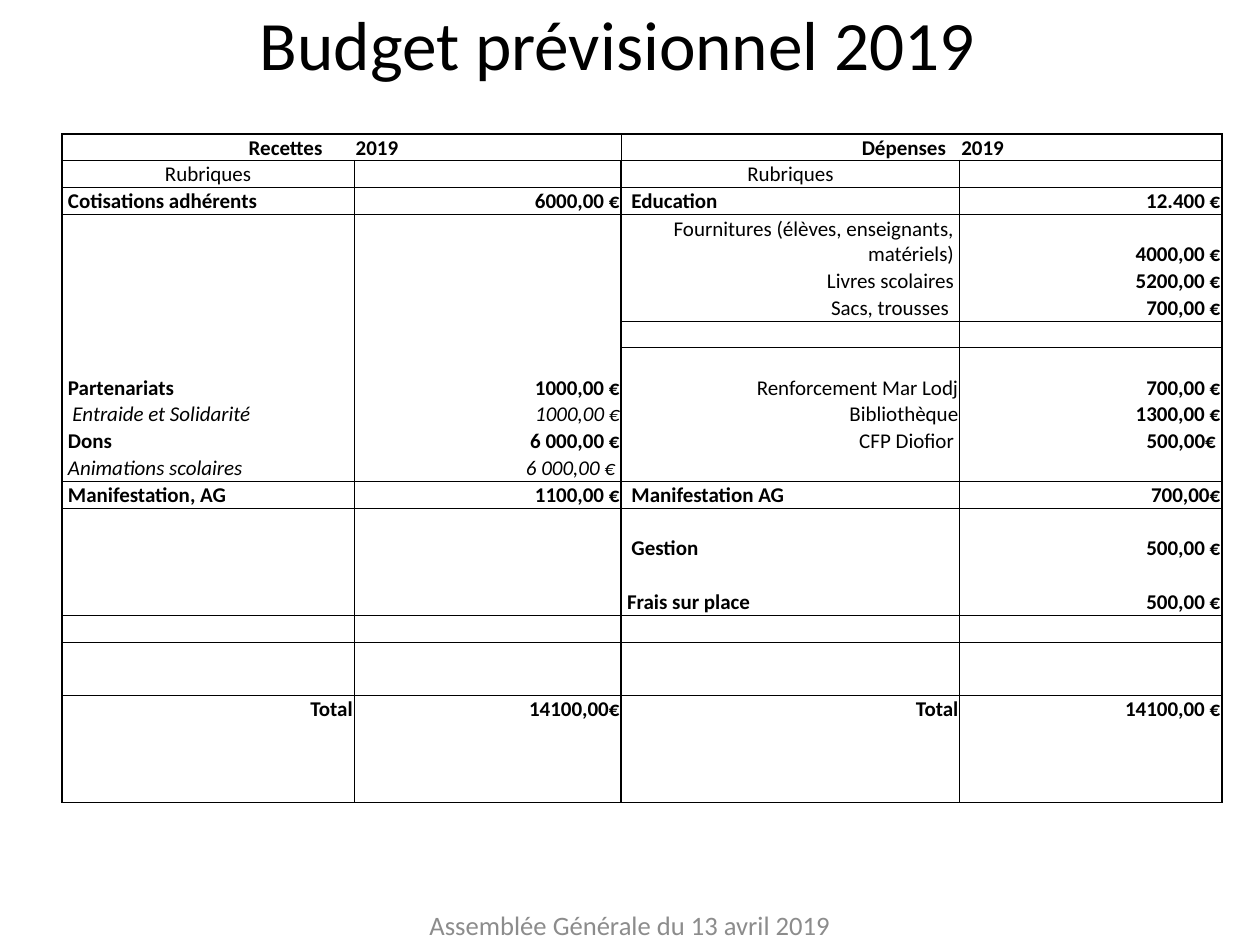
from lxml.etree import SubElement
from pptx import Presentation
from pptx.dml.color import RGBColor
from pptx.enum.text import MSO_ANCHOR, PP_ALIGN
from pptx.oxml.ns import qn
from pptx.util import Cm, Pt

FONT = "Calibri"
BLACK, GREY = "000000", "8C8C8C"
NO_STYLE = "{2D5ABB26-0587-4C30-8999-92F81FD0307C}"
ALIGN = {"l": PP_ALIGN.LEFT, "c": PP_ALIGN.CENTER, "r": PP_ALIGN.RIGHT}

COL_WIDTHS = [5.89, 5.38, 6.83, 5.28]
ROW_COUNT, ROW_HEIGHT = 23, 0.54
TALL_ROWS = {3: 1.07, 7: 1.07}

# Row -> four cells: (text, flags l/c/r + b(old) + i(talic), side padding in cm)
CELLS = {
    0: [("Recettes", "rb", 0.64), ("2019", "lb"), ("Dépenses", "rb", 0.28), ("2019", "lb")],
    1: [("Rubriques", "c"), None, ("Rubriques", "c"), None],
    2: [("Cotisations adhérents", "lb", 0.12), ("6000,00 €", "rb"),
        ("Education", "lb", 0.21), ("12.400 €", "rb")],
    3: [None, None, ("Fournitures (élèves, enseignants, matériels)", "r", 0.12),
        ("4000,00 €", "rb")],
    4: [None, None, ("Livres scolaires", "r", 0.12), ("5200,00 €", "rb")],
    5: [None, None, ("Sacs, trousses", "r", 0.22), ("700,00 €", "rb")],
    7: [("Partenariats", "lb", 0.12), ("1000,00 €", "rb"),
        ("Renforcement Mar Lodj", "r"), ("700,00 €", "rb")],
    8: [("Entraide et Solidarité", "li", 0.21), ("1000,00 €", "ri"),
        ("Bibliothèque", "r"), ("1300,00 €", "rb")],
    9: [("Dons", "lb", 0.12), ("6 000,00 €", "rb"),
        ("CFP Diofior", "r", 0.12), ("500,00€", "rb", 0.12)],
    10: [("Animations scolaires", "li", 0.12), ("6 000,00 €", "ri", 0.12), None, None],
    11: [("Manifestation, AG", "lb", 0.12), ("1100,00 €", "rb"),
         ("Manifestation AG", "lb", 0.21), ("700,00€", "rb")],
    13: [None, None, ("Gestion", "lb", 0.21), ("500,00 €", "rb")],
    15: [None, None, ("Frais sur place", "lb", 0.12), ("500,00 €", "rb")],
    19: [("Total", "rb"), ("14100,00€", "rb"), ("Total", "rb"), ("14100,00 €", "rb")],
}

# Rules under rows: row -> width in points
SHARED_RULES = {0: 1, 1: 0.5, 2: 0.5, 10: 0.5, 11: 0.5, 15: 0.5, 16: 0.5, 18: 0.5, 22: 1}
EXPENSE_RULES = {**SHARED_RULES, 5: 0.5, 6: 0.5}


def rgb(value):
    return RGBColor.from_string(value)


def cell_borders(row, col):
    """Widths of the left, right, top and bottom borders; 0 is no line."""
    if row == 0:
        verticals = [1, 0, 0.5, 0, 1]
    else:
        verticals = [1, 0.5, 1, 0.5, 1]
    rules = SHARED_RULES if col < 2 else EXPENSE_RULES
    top = 1 if row == 0 else rules.get(row - 1, 0)
    return {"L": verticals[col], "R": verticals[col + 1], "T": top, "B": rules.get(row, 0)}


class BudgetSlide:
    def __init__(self, prs):
        self.s = prs.slides.add_slide(prs.slide_layouts[5])

    def format_text(self, p, size, color, flags):
        p.alignment = ALIGN[flags[0]]
        p.font.name, p.font.size = FONT, Pt(size)
        p.font.color.rgb = rgb(color)
        p.font.bold, p.font.italic = "b" in flags, "i" in flags

    def fill_box(self, sp, text, size, color, anchor):
        tf = sp.text_frame
        tf.word_wrap = True
        tf.vertical_anchor = anchor
        tf.text = text
        self.format_text(tf.paragraphs[0], size, color, "c")

    def title(self, text, x, y, w, h):
        sp = self.s.shapes.title
        sp.left, sp.top, sp.width, sp.height = Cm(x), Cm(y), Cm(w), Cm(h)
        self.fill_box(sp, text, 39.6, BLACK, MSO_ANCHOR.MIDDLE)

    def subtitle(self, text, x, y, w, h):
        sp = self.s.shapes.add_textbox(Cm(x), Cm(y), Cm(w), Cm(h))
        self.fill_box(sp, text, 15.2, GREY, MSO_ANCHOR.TOP)

    def borders(self, cell, widths):
        tcPr = cell._tc.get_or_add_tcPr()
        for i, (side, width) in enumerate(widths.items()):
            ln = SubElement(tcPr, qn(f"a:ln{side}"))
            tcPr.insert(i, ln)
            if width:
                ln.set("w", str(Pt(width)))
                fill = SubElement(ln, qn("a:solidFill"))
                SubElement(fill, qn("a:srgbClr"), val=BLACK)
            else:
                SubElement(ln, qn("a:noFill"))

    def cell(self, cell, text="", flags="l", pad=0.03):
        cell.margin_left = Cm(pad if flags[0] == "l" else 0.03)
        cell.margin_right = Cm(pad if flags[0] == "r" else 0.03)
        cell.margin_top, cell.margin_bottom = Cm(0.02), 0
        cell.vertical_anchor = MSO_ANCHOR.BOTTOM
        cell.fill.background()
        cell.text = text
        self.format_text(cell.text_frame.paragraphs[0], 12, BLACK, flags)

    def table(self, x, y):
        heights = [TALL_ROWS.get(i, ROW_HEIGHT) for i in range(ROW_COUNT)]
        frame = self.s.shapes.add_table(ROW_COUNT, len(COL_WIDTHS), Cm(x), Cm(y),
                                        Cm(sum(COL_WIDTHS)), Cm(sum(heights)))
        table = frame.table
        table.first_row = table.horz_banding = False
        table._tbl.tblPr.find(qn("a:tableStyleId")).text = NO_STYLE
        for column, width in zip(table.columns, COL_WIDTHS):
            column.width = Cm(width)
        for row, height in enumerate(heights):
            table.rows[row].height = Cm(height)
            for col, content in enumerate(CELLS.get(row, [None] * 4)):
                cell = table.cell(row, col)
                self.cell(cell, *(content or ()))
                self.borders(cell, cell_borders(row, col))


def main():
    prs = Presentation()
    prs.slide_width, prs.slide_height = Cm(25.4), Cm(19.05)
    slide = BudgetSlide(prs)

    # Heading, budget table, occasion
    slide.title("Budget prévisionnel 2019", 1.65, 0, 21.6, 1.73)
    slide.table(1.25, 2.7)
    slide.subtitle("Assemblée Générale du 13 avril 2019", 3.8, 18.19, 17.8, 0.82)

    prs.save("out.pptx")


if __name__ == "__main__":
    main()
